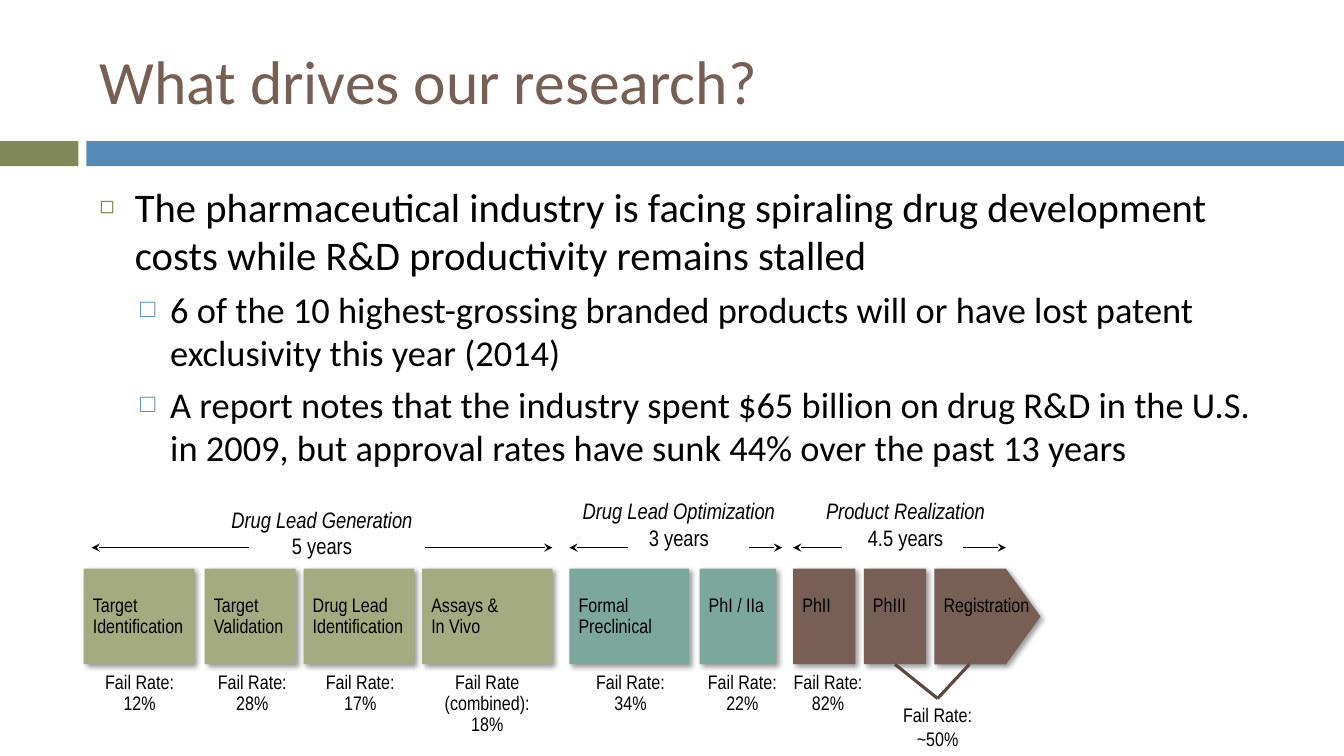
import pptx
import pptx.util
import pptx.dml.color
import pptx.enum.shapes
import pptx.enum.text
import pptx.oxml
import pptx.oxml.ns
from lxml import etree

Cm = pptx.util.Cm
Pt = pptx.util.Pt
SHAPE = pptx.enum.shapes.MSO_SHAPE
ALIGN = pptx.enum.text.PP_ALIGN
ANCHOR = pptx.enum.text.MSO_ANCHOR
qn = pptx.oxml.ns.qn

COLORS = {
    "title": "775F55",
    "olive": "808759",
    "blue": "548BB7",
    "generation": "A5AB81",
    "optimization": "7BA79D",
    "realization": "775F55",
    "bracket": "594740",
    "black": "000000",
}
LABEL_FONT = {"name": "Arial Narrow", "size": Pt(14)}
HEADING_FONT = {"name": "Arial Narrow", "size": Pt(16)}
NO_INSETS = {"margin_left": 0, "margin_top": 0, "margin_right": 0, "margin_bottom": 0}

BULLETS = [
    (0, "The pharmaceutical industry is facing spiraling drug development costs "
        "while R&D productivity remains stalled"),
    (1, "6 of the 10 highest-grossing branded products will or have lost patent "
        "exclusivity this year (2014)"),
    (1, "A report notes that the industry spent $65 billion on drug R&D in the U.S. "
        "in 2009, but approval rates have sunk 44% over the past 13 years"),
]
LEVELS = [
    {"left": 0.89, "hang": 0.89, "char": "◻", "color": "olive", "scale": 60, "size": 29, "before": 0},
    {"left": 1.78, "hang": 0.76, "char": "□", "color": "blue", "scale": 70, "size": 26, "before": 5.5},
]
STAGES = [
    (2.11, 2.79, "generation", ["Target", "Identification"]),
    (5.16, 2.29, "generation", ["Target", "Validation"]),
    (7.65, 2.79, "generation", ["Drug Lead", "Identification"]),
    (10.64, 3.28, "generation", ["Assays &", "In Vivo"]),
    (14.35, 3.02, "optimization", ["Formal", "Preclinical"]),
    (17.63, 1.93, "optimization", ["PhI / IIa"]),
    (19.99, 1.57, "realization", ["PhII"]),
    (21.77, 1.57, "realization", ["PhIII"]),
    (23.55, 2.67, "realization", ["Registration"]),
]
HEADINGS = [
    (5.36, 12.62, 5.51, "Drug Lead Generation", "5 years"),
    (14.33, 12.4, 5.56, "Drug Lead Optimization", "3 years"),
    (20.24, 12.4, 5.16, "Product Realization", "4.5 years"),
]
ARROWS = [(6.27, 2.31), (10.72, 13.92), (15.82, 14.35),
          (18.87, 19.71), (21.23, 19.99), (24.26, 25.35)]
FAIL_RATES = [
    (3.52, ["Fail Rate:", "12%"]),
    (6.36, ["Fail Rate:", "28%"]),
    (9.08, ["Fail Rate:", "17%"]),
    (12.28, ["Fail Rate", "(combined):", "18%"]),
    (15.89, ["Fail Rate:", "34%"]),
    (18.71, ["Fail Rate:", "22%"]),
    (20.87, ["Fail Rate:", "82%"]),
]


def apply(obj, fmt):
    for name, value in fmt.items():
        setattr(obj, name, value)


def rgb(color):
    return pptx.dml.color.RGBColor.from_string(COLORS[color])


def add_paragraph(tf, text, font, para=None, color="black"):
    p = tf.paragraphs[0]
    if p.runs:
        p = tf.add_paragraph()
    apply(p, para or {})
    r = p.add_run()
    r.text = text
    apply(r.font, font)
    r.font.color.rgb = rgb(color)
    return p


def add_text_box(s, left, top, width, height, frame):
    sp = s.shapes.add_textbox(Cm(left), Cm(top), Cm(width), Cm(height))
    apply(sp.text_frame, {"word_wrap": True, **frame})
    return sp


def add_block(s, preset, left, top, width, height, color):
    sp = s.shapes.add_shape(preset, Cm(left), Cm(top), Cm(width), Cm(height))
    sp.shadow.inherit = False
    sp.fill.solid()
    sp.fill.fore_color.rgb = rgb(color)
    sp.line.fill.background()
    return sp


def add_drop_shadow(sp):
    effects = sp._element.spPr.find(qn("a:effectLst"))
    shadow = etree.SubElement(effects, qn("a:outerShdw"), blurRad=str(Pt(4)),
                              dist=str(Pt(3)), dir="2700000", algn="tl", rotWithShape="0")
    clr = etree.SubElement(shadow, qn("a:srgbClr"), val=COLORS["black"])
    etree.SubElement(clr, qn("a:alpha"), val="40000")


def add_line(s, x1, y1, x2, y2, color, width, arrow=False):
    cx = s.shapes.add_connector(pptx.enum.shapes.MSO_CONNECTOR.STRAIGHT,
                                Cm(x1), Cm(y1), Cm(x2), Cm(y2))
    cx.line.color.rgb = rgb(color)
    cx.line.width = Pt(width)
    if arrow:
        etree.SubElement(cx.line._get_or_add_ln(), qn("a:tailEnd"), type="stealth")
    etree.SubElement(cx._element.spPr, qn("a:effectLst"))
    return cx


def add_bullet(tf, level, text):
    look = LEVELS[level]
    p = add_paragraph(tf, text, {"name": "Calibri", "size": Pt(look["size"])},
                      {"level": level, "space_before": Pt(look["before"])})
    pPr = p._p.get_or_add_pPr()
    pPr.set("marL", str(Cm(look["left"])))
    pPr.set("indent", str(-Cm(look["hang"])))
    clr = etree.SubElement(pPr, qn("a:buClr"))
    etree.SubElement(clr, qn("a:srgbClr"), val=COLORS[look["color"]])
    etree.SubElement(pPr, qn("a:buSzPct"), val=str(look["scale"] * 1000))
    etree.SubElement(pPr, qn("a:buFont"), typeface="Arial")
    etree.SubElement(pPr, qn("a:buChar"), char=look["char"])


def add_stage(s, left, width, color, lines):
    preset = SHAPE.PENTAGON if lines == ["Registration"] else SHAPE.RECTANGLE
    sp = add_block(s, preset, left, 14.33, width, 2.41, color)
    if preset == SHAPE.PENTAGON:
        sp.adjustments[0] = 0.36
    add_drop_shadow(sp)
    apply(sp.text_frame, {
        "word_wrap": False, "vertical_anchor": ANCHOR.MIDDLE,
        "margin_left": Cm(0.23), "margin_right": Cm(0.23),
        "margin_top": 0, "margin_bottom": Cm(0.54 if len(lines) == 1 else 0),
    })
    for line in lines:
        add_paragraph(sp.text_frame, line, LABEL_FONT,
                      {"alignment": ALIGN.LEFT, "line_spacing": 0.9})
    return sp


def add_heading(s, left, top, width, phase, years):
    tf = add_text_box(s, left, top, width, 1.6, {}).text_frame
    for text, italic in ((phase, True), (years, False)):
        add_paragraph(tf, text, {**HEADING_FONT, "italic": italic}, {"alignment": ALIGN.CENTER})


def add_fail_rate(s, center, lines):
    sp = add_text_box(s, center - 1.41, 16.94, 2.82, 1.65, {"word_wrap": False, **NO_INSETS})
    for line in lines:
        add_paragraph(sp.text_frame, line, LABEL_FONT,
                      {"alignment": ALIGN.CENTER, "line_spacing": 0.9})


def add_combined_rate(s, phase_three):
    sp = add_text_box(s, 22.5, 17.6, 2.26, 1.45, {"word_wrap": False})
    for line in ("Fail Rate:", "~50%"):
        add_paragraph(sp.text_frame, line, LABEL_FONT, {"alignment": ALIGN.CENTER})
    from_phase = add_line(s, 22.56, 16.74, 23.63, 17.6, "bracket", 2.25)
    from_phase.begin_connect(phase_three, 2)
    from_registration = add_line(s, 24.43, 16.74, 23.63, 17.6, "bracket", 2.25)
    for cx in (from_phase, from_registration):
        cx.end_connect(sp, 0)


def main():
    prs = pptx.Presentation()
    apply(prs, {"slide_width": Cm(33.87), "slide_height": Cm(19.05)})
    s = prs.slides.add_slide(prs.slide_layouts[6])
    add_block(s, SHAPE.RECTANGLE, 0, 3.56, 1.98, 0.63, "olive")
    add_block(s, SHAPE.RECTANGLE, 2.18, 3.56, 31.69, 0.63, "blue")
    title = add_text_box(s, 2.26, 0.64, 30.2, 2.74, {"vertical_anchor": ANCHOR.MIDDLE})
    add_paragraph(title.text_frame, "What drives our research?",
                  {"name": "Calibri", "size": Pt(44)}, color="title")
    body = add_text_box(s, 2.26, 4.45, 30.2, 7.6, {})
    for level, text in BULLETS:
        add_bullet(body.text_frame, level, text)
    stages = [add_stage(s, *stage) for stage in STAGES]
    for heading in HEADINGS:
        add_heading(s, *heading)
    for start, tip in ARROWS:
        add_line(s, start, 13.8, tip, 13.8, "black", 1, arrow=True)
    for rate in FAIL_RATES:
        add_fail_rate(s, *rate)
    add_combined_rate(s, stages[7])
    prs.save("out.pptx")


if __name__ == "__main__":
    main()
